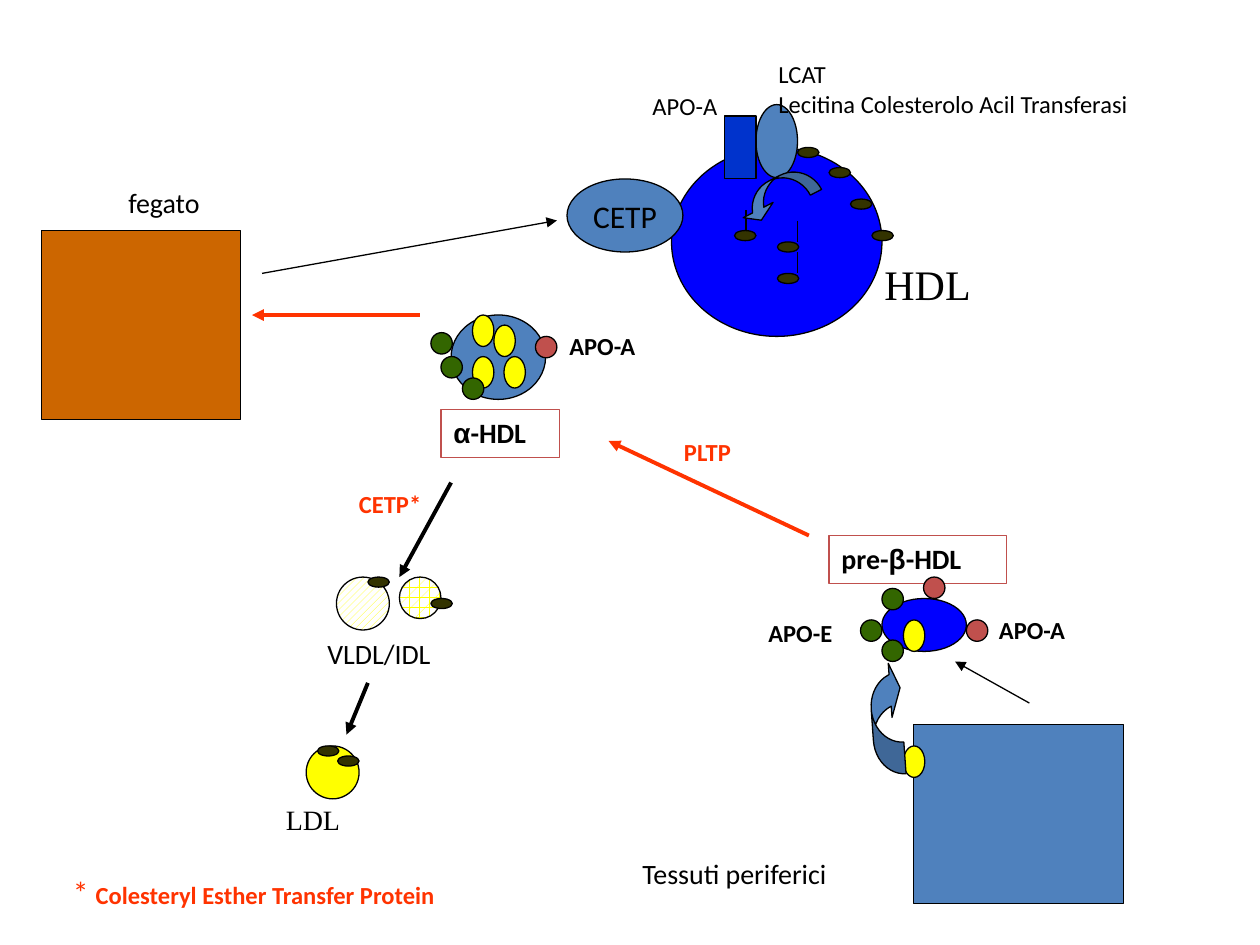
from dataclasses import dataclass

from lxml import etree
from pptx import Presentation
from pptx import util as u
from pptx.dml.color import RGBColor
from pptx.enum import dml, shapes, text
from pptx.oxml import ns

COLOURS = {
    "black": "000000", "white": "FFFFFF", "liver": "CC6600", "red": "FF3300",
    "yellow": "FFFF00", "ester": "333300", "hdl": "0000FF", "apo": "0033CC",
    "steel": "4F81BD", "apo_a": "C0504D", "apo_e": "336600",
}
RECTANGLE = shapes.MSO_SHAPE.RECTANGLE
OVAL = shapes.MSO_SHAPE.OVAL

# Width and height of the repeated particles
ESTER = (0.17, 0.08)
LIPID = (0.17, 0.25)
PROTEIN = (0.17, 0.17)


@dataclass
class Body:
    left: float
    top: float
    width: float
    height: float
    fill: str
    kind: shapes.MSO_SHAPE = OVAL
    pattern: dml.MSO_PATTERN | None = None
    rotation: float = 0
    adjustments: tuple[float, ...] = ()


@dataclass
class Run:
    content: str
    size: int = 16
    font: str = "Calibri"
    bold: bool = False


@dataclass
class Label:
    left: float
    top: float
    width: float
    height: float
    paragraphs: list[list[Run]]
    colour: str = "black"
    wrap: bool = False
    boxed: bool = False


@dataclass
class Line:
    start: tuple[float, float]
    end: tuple[float, float]
    colour: str = "black"
    weight: float = 0.75
    arrow: bool = True


def rgb(name: str) -> RGBColor:
    return RGBColor.from_string(COLOURS[name])


def particles(size: tuple[float, float], fill: str, *places: tuple[float, float]) -> list[Body]:
    return [Body(*place, *size, fill) for place in places]


def simple(left: float, top: float, width: float, height: float, content: str,
           size: int = 16, font: str = "Calibri", bold: bool = False, **options) -> Label:
    return Label(left, top, width, height, [[Run(content, size, font, bold)]], **options)


def draw_body(slide, body: Body):
    shape = slide.shapes.add_shape(body.kind, u.Inches(body.left), u.Inches(body.top),
                                   u.Inches(body.width), u.Inches(body.height))
    shape.shadow.inherit = False
    shape.rotation = body.rotation
    for index, value in enumerate(body.adjustments):
        shape.adjustments[index] = value
    if body.pattern is None:
        shape.fill.solid()
        shape.fill.fore_color.rgb = rgb(body.fill)
    else:
        shape.fill.patterned()
        shape.fill.pattern = body.pattern
        shape.fill.fore_color.rgb = rgb(body.fill)
        shape.fill.back_color.rgb = rgb("white")
    shape.line.color.rgb = rgb("black")
    shape.line.width = u.Pt(0.75)
    return shape


def set_font(font, run: Run, colour: str) -> None:
    font.size = u.Pt(run.size)
    font.name = run.font
    font.bold = run.bold
    font.color.rgb = rgb(colour)


def write(paragraph, runs: list[Run], colour: str) -> None:
    for run in runs:
        piece = paragraph.add_run()
        piece.text = run.content
        set_font(paragraph.font if len(runs) == 1 else piece.font, run, colour)


def draw_label(slide, label: Label) -> None:
    frame = (u.Inches(label.left), u.Inches(label.top),
             u.Inches(label.width), u.Inches(label.height))
    if label.boxed:
        shape = slide.shapes.add_shape(RECTANGLE, *frame)
        shape.shadow.inherit = False
        shape.fill.background()
        shape.line.color.rgb = rgb("apo_a")
        shape.line.width = u.Pt(0.75)
    else:
        shape = slide.shapes.add_textbox(*frame)
    text_frame = shape.text_frame
    text_frame.word_wrap = label.wrap
    text_frame.auto_size = text.MSO_AUTO_SIZE.SHAPE_TO_FIT_TEXT
    text_frame.vertical_anchor = text.MSO_ANCHOR.TOP
    for index, runs in enumerate(label.paragraphs):
        paragraph = text_frame.add_paragraph() if index else text_frame.paragraphs[0]
        paragraph.alignment = text.PP_ALIGN.LEFT
        write(paragraph, runs, label.colour)


def draw_line(slide, line: Line) -> None:
    connector = slide.shapes.add_connector(
        shapes.MSO_CONNECTOR.STRAIGHT, *(u.Inches(value) for value in line.start + line.end))
    connector.line.color.rgb = rgb(line.colour)
    connector.line.width = u.Pt(line.weight)
    if line.arrow:
        etree.SubElement(connector.line._get_or_add_ln(), ns.qn("a:tailEnd"), type="triangle")
    etree.SubElement(connector._element.spPr, ns.qn("a:effectLst"))


BOXES = [
    Label(3.5, 3.25, 0.94, 0.38, [[Run("α", font="Arial", bold=True), Run("-HDL", bold=True)]],
          boxed=True),
    Label(6.58, 4.25, 1.41, 0.38, [[Run("pre-", bold=True), Run("β", font="Arial", bold=True),
                                    Run("-HDL", bold=True)]], boxed=True),
]

BODIES = [
    # Liver and peripheral tissue
    Body(0.33, 1.83, 1.58, 1.5, "liver", RECTANGLE),
    Body(7.25, 5.75, 1.67, 1.42, "steel", RECTANGLE),
    *particles(LIPID, "yellow", (7.17, 5.92)),
    # VLDL/IDL and LDL
    Body(3.17, 4.58, 0.33, 0.33, "yellow", pattern=dml.MSO_PATTERN.PLAID),
    Body(2.67, 4.58, 0.42, 0.42, "yellow", pattern=dml.MSO_PATTERN.WIDE_UPWARD_DIAGONAL),
    Body(2.43, 5.92, 0.42, 0.42, "yellow"),
    *particles(ESTER, "ester", (2.92, 4.58), (3.42, 4.75), (2.52, 5.92), (2.68, 6)),
    # HDL with its enzymes
    Body(5.33, 1.17, 1.67, 1.5, "hdl"),
    *particles(ESTER, "ester", (6.92, 1.83), (6.75, 1.58), (6.58, 1.33), (6.33, 1.17),
               (6.17, 1.92), (6.17, 2.17), (5.83, 1.83)),
    Body(6, 0.83, 0.33, 0.58, "steel"),
    Body(5.75, 0.92, 0.25, 0.5, "apo", RECTANGLE),
    # α-HDL
    Body(3.58, 2.5, 0.75, 0.67, "steel"),
    *particles(LIPID, "yellow", (4, 2.83), (3.75, 2.83), (3.92, 2.58), (3.75, 2.5)),
    *particles(PROTEIN, "apo_a", (4.25, 2.67)),
    *particles(PROTEIN, "apo_e", (3.42, 2.64), (3.5, 2.83), (3.67, 3)),
    # pre-β-HDL
    Body(7, 4.75, 0.67, 0.42, "hdl"),
    *particles(PROTEIN, "apo_a", (7.67, 4.92), (7.33, 4.58)),
    *particles(PROTEIN, "apo_e", (6.83, 4.92), (7, 5.08), (7, 4.67)),
    *particles(LIPID, "yellow", (7.17, 4.92)),
]

LINES = [
    Line((5.92, 1.67), (5.92, 1.83), arrow=False),
    Line((6.33, 1.75), (6.33, 1.92), arrow=False),
    Line((6.33, 2), (6.33, 2.17), arrow=False),
    Line((3.33, 2.5), (2, 2.5), "red", 2.25),
    Line((6.42, 4.25), (4.83, 3.5), "red", 2.25),
    Line((3.58, 3.83), (3.17, 4.58), weight=2.25),
    Line((2.92, 5.42), (2.75, 5.83), weight=2.25),
    Line((8.17, 5.58), (7.58, 5.25)),
    Line((2.08, 2.17), (4.42, 1.75)),
]

CURVED_ARROWS = [
    Body(6.04, 1.21, 0.25, 0.67, "steel", shapes.MSO_SHAPE.CURVED_RIGHT_ARROW,
         rotation=62.9, adjustments=(0.4, 1.067, 0.333)),
    Body(6.92, 5.25, 0.24, 0.9, "steel", shapes.MSO_SHAPE.CURVED_LEFT_ARROW,
         rotation=176, adjustments=(1.05, 1.794, 0.333)),
]

LABELS = [
    simple(0.92, 1.42, 0.89, 0.37, "fegato"),
    simple(2.5, 5, 1.27, 0.37, "VLDL/IDL"),
    simple(2.17, 6.32, 0.63, 0.37, "LDL", font="Times New Roman"),
    simple(6.92, 2, 0.89, 0.5, "HDL", 24, "Times New Roman"),
    simple(5, 6.75, 2.03, 0.37, "Tessuti periferici"),
    simple(5.08, 0.67, 0.82, 0.33, "APO-A", 14),
    Label(6.08, 0.42, 3.53, 0.57, [[Run("LCAT", 14)],
                                   [Run("Lecitina Colesterolo Acil Transferasi", 14)]]),
    simple(4.42, 2.58, 0.86, 0.33, "APO-A", 14, bold=True),
    simple(6, 4.86, 0.84, 0.33, "APO-E", 14, bold=True),
    simple(7.83, 4.83, 0.86, 0.33, "APO-A", 14, bold=True),
    simple(2.75, 3.83, 0.92, 0.57, "CETP*", 14, bold=True, colour="red", wrap=True),
    simple(5.33, 3.42, 0.65, 0.33, "PLTP", 14, bold=True, colour="red"),
    Label(0.48, 6.88, 3.72, 0.4, [[Run("* ", 18), Run("Colesteryl Esther Transfer Protein", 14,
                                                     bold=True)]], colour="red", wrap=True),
]


def main() -> None:
    presentation = Presentation()
    presentation.slide_width = u.Inches(10)
    presentation.slide_height = u.Inches(7.5)
    slide = presentation.slides.add_slide(presentation.slide_layouts[6])

    for box in BOXES:
        draw_label(slide, box)
    for body in BODIES:
        draw_body(slide, body)
    for line in LINES:
        draw_line(slide, line)
    for arrow in CURVED_ARROWS:
        draw_body(slide, arrow)

    # CETP docked on HDL
    cetp = draw_body(slide, Body(4.5, 1.42, 0.92, 0.58, "steel"))
    cetp.text_frame.word_wrap = False
    cetp.text_frame.vertical_anchor = text.MSO_ANCHOR.MIDDLE
    paragraph = cetp.text_frame.paragraphs[0]
    paragraph.alignment = text.PP_ALIGN.CENTER
    write(paragraph, [Run("CETP", 18)], "black")

    for label in LABELS:
        draw_label(slide, label)
    presentation.save("out.pptx")


if __name__ == "__main__":
    main()
